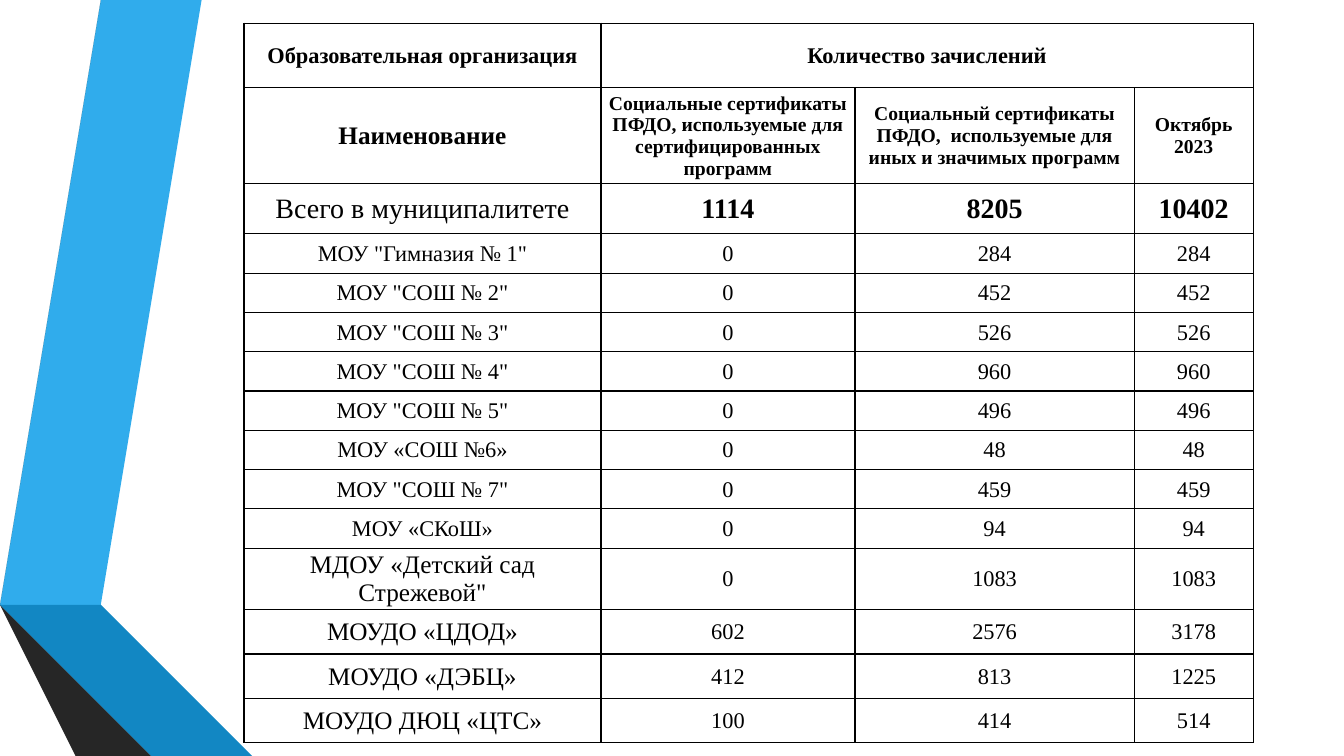
from lxml import etree
from pptx import Presentation, util as u
from pptx.dml.color import RGBColor
from pptx.enum import text
from pptx.oxml.ns import qn

HEX = {"sky": "30ACEC", "gray": "595959", "black": "262626", "navy": "0C5A82",
       "blue": "1287C3", "dark": "404040", "ink": "000000"}
FONT = "Times New Roman"

# Folded ribbons, back to front: colour and corner points in inches
BANDS = [
    ("sky", [(0.5, 5.78), (0.77, 5.83), (1.73, 0), (1.45, 0)]),
    ("gray", [(1.39, 0), (1.11, 0), (0.16, 5.73), (0.44, 5.77)]),
    ("black", [(0.16, 5.73), (1.45, 7.5), (1.51, 7.5)]),
    ("navy", [(0.5, 5.79), (2.08, 7.5), (2.14, 7.5)]),
    ("blue", [(0.5, 5.79), (2.14, 7.5), (2.83, 7.5), (0.77, 5.83), (0.5, 5.78)]),
    ("dark", [(2.02, 7.5), (0.48, 5.83), (0.43, 5.78), (0.44, 5.77),
              (0.16, 5.73), (1.51, 7.5)]),
]

# Row height, size of the name, size of the other cells, cell texts
HEAD = [
    (0.64, 16, 16, ["Образовательная организация", "Количество зачислений", "", ""]),
    (0.95, 18, 14, ["Наименование",
                    "Социальные сертификаты ПФДО, используемые для сертифицированных программ",
                    "Социальный сертификаты ПФДО,  используемые для иных и значимых программ",
                    "Октябрь 2023"]),
]
TOTAL = [(0.5, 20, 20, ["Всего в муниципалитете", "1114", "8205", "10402"])]
SCHOOLS = [(0.39, 16, 16, [name, "0", num, num]) for name, num in [
    ('МОУ "Гимназия № 1"', "284"),
    ('МОУ "СОШ № 2"', "452"),
    ('МОУ "СОШ № 3"', "526"),
    ('МОУ "СОШ № 4"', "960"),
    ('МОУ "СОШ № 5"', "496"),
    ("МОУ «СОШ №6»", "48"),
    ('МОУ "СОШ № 7"', "459"),
    ("МОУ «СКоШ»", "94"),
]]
NURSERY = [(0.61, 18, 16, ['МДОУ «Детский сад Стрежевой"', "0", "1083", "1083"])]
CLUBS = [(0.44, 18, 16, row) for row in [
    ["МОУДО «ЦДОД»", "602", "2576", "3178"],
    ["МОУДО «ДЭБЦ»", "412", "813", "1225"],
    ["МОУДО ДЮЦ «ЦТС»", "100", "414", "514"],
]]
ROWS = HEAD + TOTAL + SCHOOLS + NURSERY + CLUBS
COLS = [3.54, 2.52, 2.77, 1.18]
LEFT, TOP = 2.42, 0.23


def color(key):
    return RGBColor.from_string(HEX[key])


def add_band(slide, key, pts):
    pen = slide.shapes.build_freeform(*pts[0], scale=u.Inches(1))
    pen.add_line_segments(pts[1:], close=True)
    band = pen.convert_to_shape()
    band.shadow.inherit = False
    band.fill.solid()
    band.fill.fore_color.rgb = color(key)
    band.line.fill.background()


def add_edges(cell):
    """Draw a thin line on all four sides; lines must come before the fill."""
    props = cell._tc.get_or_add_tcPr()
    for spot, side in enumerate(["a:lnL", "a:lnR", "a:lnT", "a:lnB"]):
        edge = etree.Element(qn(side), w=str(u.Pt(1)))
        fill = etree.SubElement(edge, qn("a:solidFill"))
        etree.SubElement(fill, qn("a:srgbClr"), val=HEX["ink"])
        props.insert(spot, edge)


def fill_cell(cell, words, size, bold):
    cell.text_frame.text = words
    cell.vertical_anchor = text.MSO_ANCHOR.MIDDLE
    cell.margin_left = cell.margin_right = cell.margin_top = u.Inches(0.01)
    cell.margin_bottom = 0
    cell.fill.background()
    add_edges(cell)
    para = cell.text_frame.paragraphs[0]
    para.alignment = text.PP_ALIGN.CENTER
    for run in para.runs:
        run.font.name = FONT
        run.font.size = u.Pt(size)
        run.font.bold = bold
        run.font.color.rgb = color("ink")


def add_grid(slide):
    high = sum(row[0] for row in ROWS)
    frame = slide.shapes.add_table(len(ROWS), len(COLS), u.Inches(LEFT), u.Inches(TOP),
                                   u.Inches(sum(COLS)), u.Inches(high))
    grid = frame.table
    grid.first_row = grid.horz_banding = False
    for col, wide in zip(grid.columns, COLS):
        col.width = u.Inches(wide)
    for r, (tall, first, rest, words) in enumerate(ROWS):
        grid.rows[r].height = u.Inches(tall)
        for c, word in enumerate(words):
            bold = r < len(HEAD) or (r == len(HEAD) and c > 0)
            fill_cell(grid.cell(r, c), word, rest if c else first, bold)
    grid.cell(0, 1).merge(grid.cell(0, 3))


def main():
    deck = Presentation()
    deck.slide_width, deck.slide_height = u.Inches(13.33), u.Inches(7.5)
    slide = deck.slides.add_slide(deck.slide_layouts[6])
    for key, pts in BANDS:
        add_band(slide, key, pts)
    add_grid(slide)
    deck.save("out.pptx")


if __name__ == "__main__":
    main()
